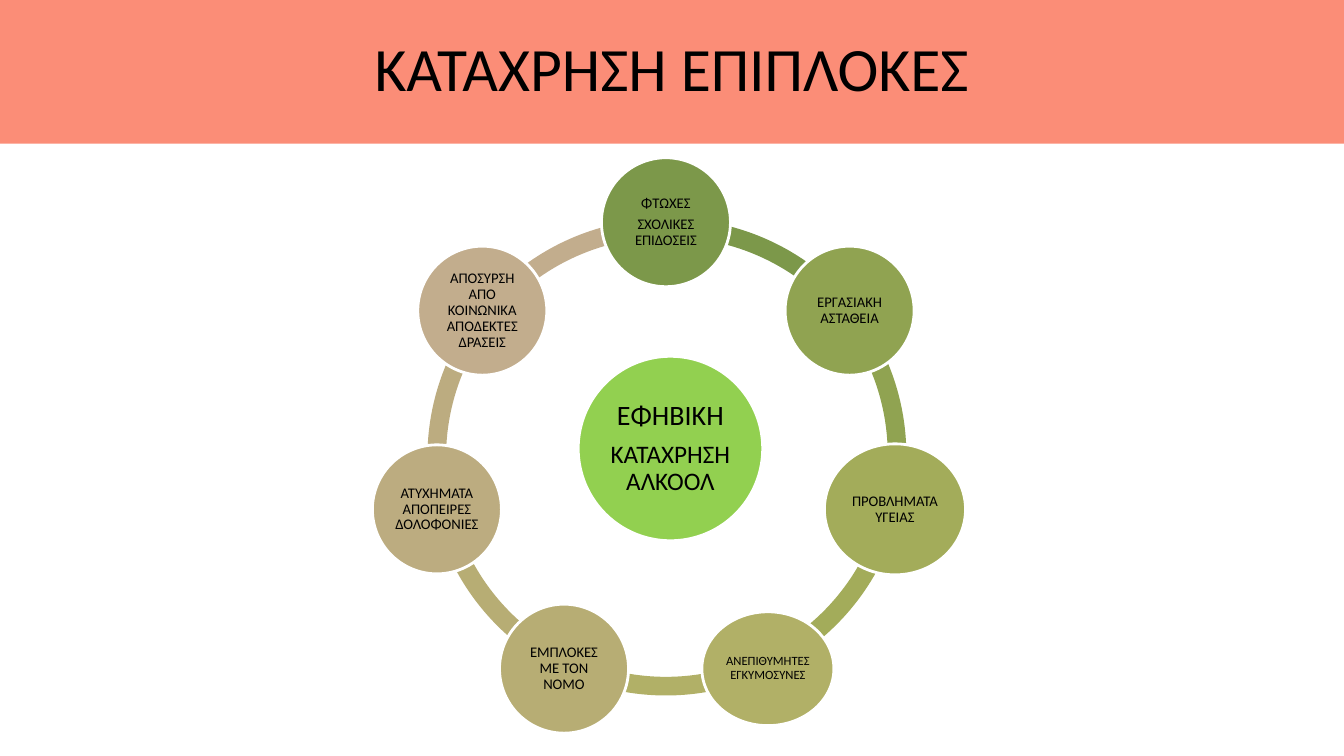
from math import cos, radians, sin

from pptx import Presentation
from pptx.dml.color import RGBColor
from pptx.enum.shapes import MSO_SHAPE
from pptx.enum.text import MSO_ANCHOR, PP_ALIGN
from pptx.util import Inches, Pt

RECT, OVAL, ARC = MSO_SHAPE.RECTANGLE, MSO_SHAPE.OVAL, MSO_SHAPE.BLOCK_ARC
MIDDLE, CENTER = MSO_ANCHOR.MIDDLE, PP_ALIGN.CENTER

WIDE, HIGH = 13.33, 7.5
RING = (4.24, 2.17, 4.73)  # left, top, side
ORBIT = 2.33  # ring centre to node centre
BAND = 0.039  # arc thickness as a share of its side
TURN = 0.6  # adjustment units per degree
DISC = (1.28, 1.28)

# lines, fill, size, font size, shift of the arc that follows
NODES = [
    (["ΦΤΩΧΕΣ", "ΣΧΟΛΙΚΕΣ ΕΠΙΔΟΣΕΙΣ"], "7C984A", DISC, 10.5, (0.04, 0)),
    (["ΕΡΓΑΣΙΑΚΗ ΑΣΤΑΘΕΙΑ"], "90A351", DISC, 10.5, (0.02, -0.02)),
    (["ΠΡΟΒΛΗΜΑΤΑ ΥΓΕΙΑΣ"], "A3AC5A", (1.4, 1.3), 10.5, (0.02, -0.01)),
    (["ΑΝΕΠΙΘΥΜΗΤΕΣ ΕΓΚΥΜΟΣΥΝΕΣ"], "B1B067", (1.31, 1.13), 9, (0, 0)),
    (["ΕΜΠΛΟΚΕΣ ΜΕ ΤΟΝ ΝΟΜΟ"], "B7AD74", DISC, 10.5, (0, 0)),
    (["ΑΤΥΧΗΜΑΤΑ ΑΠΟΠΕΙΡΕΣ ΔΟΛΟΦΟΝΙΕΣ"], "BCAC80", DISC, 10.5, (0, 0)),
    (["ΑΠΟΣΥΡΣΗ ΑΠΌ ΚΟΙΝΩΝΙΚΑ ΑΠΟΔΕΚΤΕΣ ΔΡΑΣΕΙΣ"], "C2AD8D", DISC, 10.5,
     (0, 0)),
]


def color(code):
    return RGBColor.from_string(code)


def draw(slide, kind, box, fill, edge=None):
    """Add a filled shape, with a 2 pt outline if an edge colour is given."""
    shape = slide.shapes.add_shape(kind, *(Inches(n) for n in box))
    shape.shadow.inherit = False
    shape.fill.solid()
    shape.fill.fore_color.rgb = color(fill)
    if edge:
        shape.line.color.rgb = color(edge)
        shape.line.width = Pt(2)
    else:
        shape.line.fill.background()
    return shape


def write(shape, lines, sizes, inset, gap=0.35):
    """Set centred paragraphs; gap is a share of each font size."""
    frame = shape.text_frame
    frame.text = "\n".join(lines)
    frame.word_wrap = True
    frame.vertical_anchor = MIDDLE
    frame.margin_left = frame.margin_right = Inches(inset)
    frame.margin_top = frame.margin_bottom = Inches(inset)
    for para, size in zip(frame.paragraphs, sizes):
        para.alignment = CENTER
        para.line_spacing = 0.9
        para.space_after = Pt(gap * size)
        for run in para.runs:
            run.font.name = "Calibri"
            run.font.size = Pt(size)
            run.font.color.rgb = color("000000")


def title(slide, box):
    band = draw(slide, RECT, box, "FB8D77")
    write(band, ["ΚΑΤΑΧΡΗΣΗ ΕΠΙΠΛΟΚΕΣ"], [44], 0.05, 0)


def cycle(slide, left, top, side):
    """Place the arcs, the hub and the nodes around a square's centre."""
    step = 360 / len(NODES)
    spots = [270 + step * i for i in range(len(NODES))]
    midx, midy = left + side / 2, top + side / 2

    for spot, (_, fill, _, _, (dx, dy)) in zip(spots, NODES):
        arc = draw(slide, ARC, (left + dx, top + dy, side, side), fill)
        arc.adjustments[0] = spot % 360 * TURN
        arc.adjustments[1] = (spot + step) % 360 * TURN
        arc.adjustments[2] = BAND

    hub = draw(slide, OVAL, (midx - 0.87, midy - 1, 1.83, 1.83),
               "92D050", "FFFFFF")
    write(hub, ["ΕΦΗΒΙΚΗ", "ΚΑΤΑΧΡΗΣΗ ΑΛΚΟΟΛ"], [20, 18], 0.03)

    for spot, (lines, fill, (wide, high), size, _) in zip(spots, NODES):
        x = midx + ORBIT * cos(radians(spot)) - wide / 2
        y = midy + ORBIT * sin(radians(spot)) - high / 2
        node = draw(slide, OVAL, (x, y, wide, high), fill, "FFFFFF")
        write(node, lines, [size] * len(lines), 0.02)


def main():
    deck = Presentation()
    deck.slide_width, deck.slide_height = Inches(WIDE), Inches(HIGH)
    slide = deck.slides.add_slide(deck.slide_layouts[6])
    title(slide, (0, 0, WIDE, 0.19 * HIGH))
    cycle(slide, *RING)
    deck.save("out.pptx")


if __name__ == "__main__":
    main()
